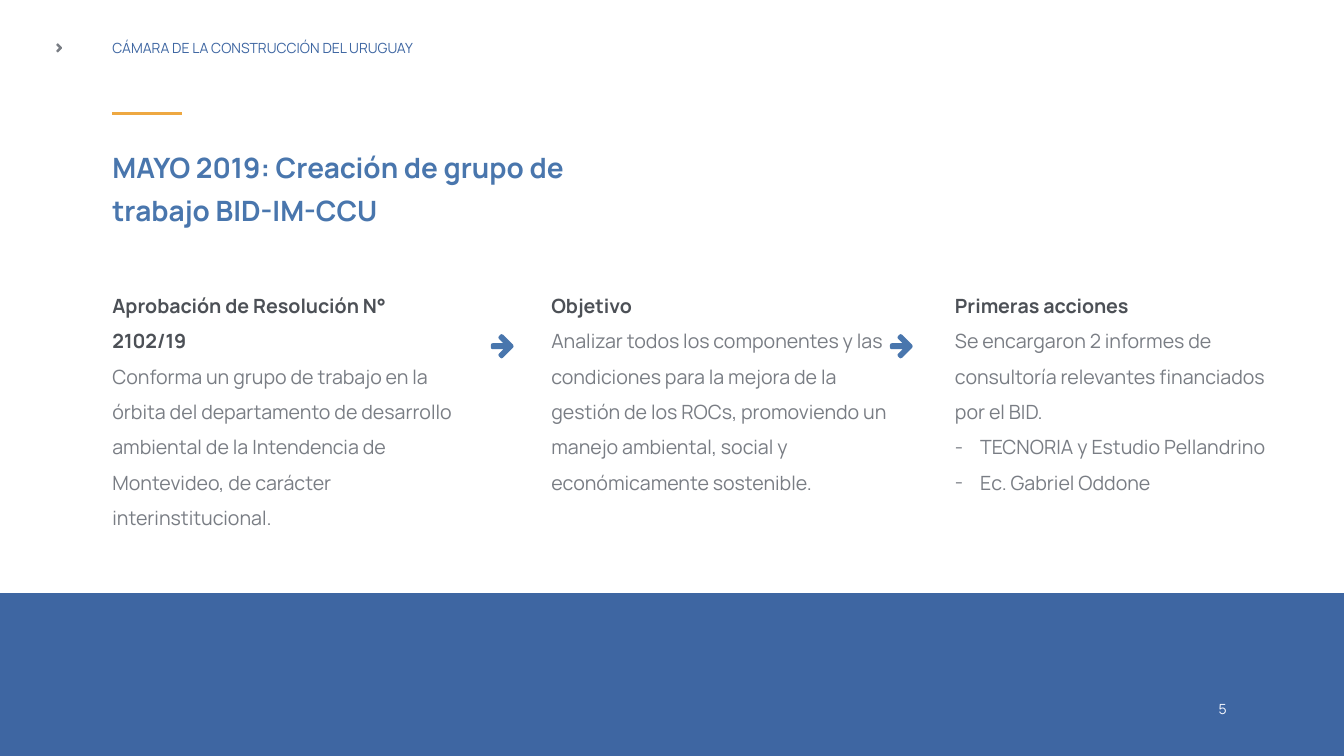
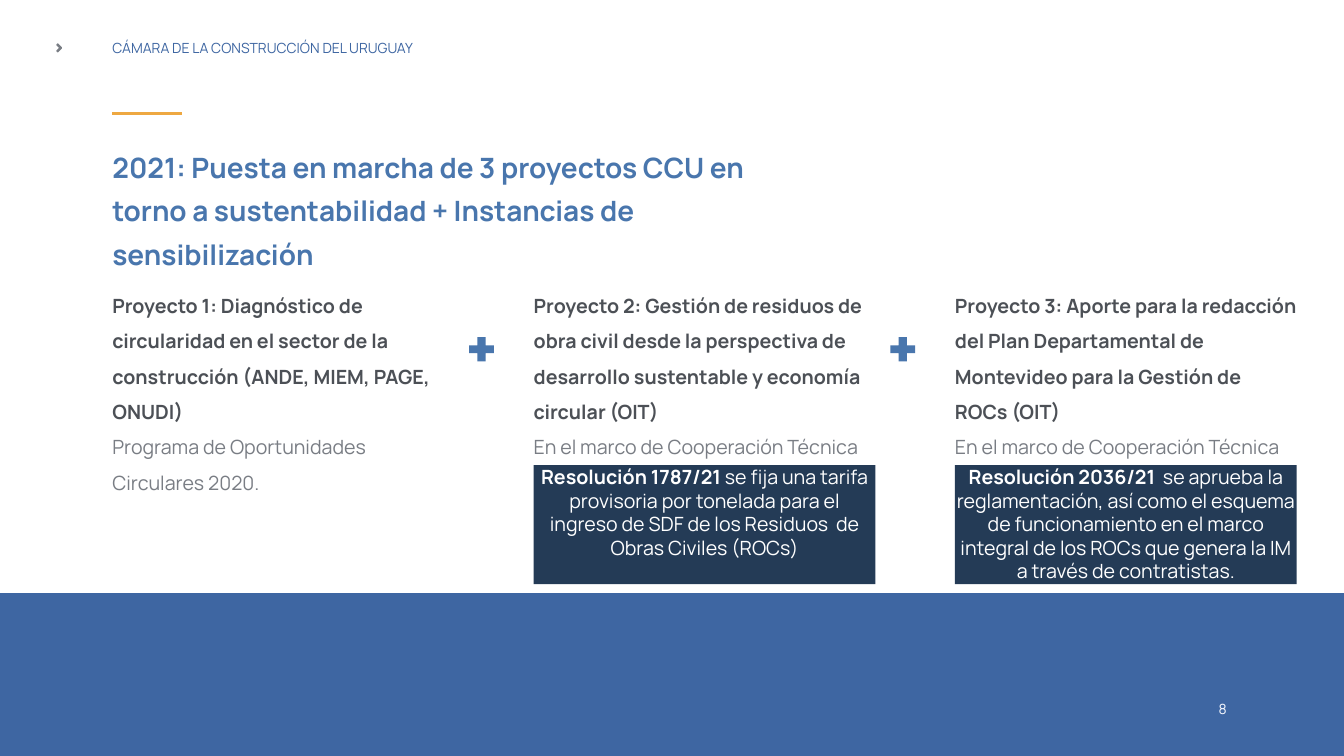
from pptx import Presentation
from pptx.dml.color import RGBColor
from pptx.enum.shapes import MSO_CONNECTOR, MSO_SHAPE
from pptx.enum.text import MSO_ANCHOR, PP_ALIGN
from pptx.oxml.ns import qn
from pptx.util import Inches, Pt
from lxml.etree import SubElement

COLORS = {
    "blue": "3E66A2",
    "title": "4976AD",
    "navy": "243B56",
    "accent": "EEA841",
    "heading": "4C5056",
    "body": "797D84",
    "number": "F7F9FF",
    "white": "FFFFFF",
}
FONT = "Manrope"
LEFT = 2.23
COLUMN_TOP = 5.6
COLUMN_WIDTH = 6.78
COLUMN_LEFTS = (LEFT, 10.59, 18.95)
BODY_SIZE = 28

# Upper halves of outlines that are symmetric about a horizontal axis
ARROW_HALF = [(0.45, 0), (0.44, -0.03), (0.24, -0.23), (0.21, -0.24), (0.19, -0.23),
              (0.16, -0.2), (0.15, -0.17), (0.16, -0.15), (0.25, -0.06),
              (0.04, -0.06), (0.01, -0.05), (0, -0.02)]
CHEVRON_HALF = [(0.11, 0), (0.11, -0.01), (0.03, -0.09), (0.02, -0.09),
                (0, -0.07), (0, -0.05), (0.05, 0)]


def color(name):
    return RGBColor.from_string(COLORS[name])


def paint(shape, fill):
    shape.shadow.inherit = False
    shape.fill.solid()
    shape.fill.fore_color.rgb = color(fill)
    shape.line.fill.background()


def clear_margins(frame):
    frame.margin_left = frame.margin_right = 0
    frame.margin_top = frame.margin_bottom = 0


def style_span(span, size, color_name, bold=False):
    span.font.name = FONT
    span.font.size = Pt(size)
    span.font.bold = bold
    span.font.color.rgb = color(color_name)


def add_text(page, left, top, width, height, text, size, color_name,
             bold=False, spacing=None, align=None, wrap=True):
    box = page.shapes.add_textbox(Inches(left), Inches(top), Inches(width), Inches(height))
    frame = box.text_frame
    clear_margins(frame)
    frame.word_wrap = wrap
    frame.text = text
    for paragraph in frame.paragraphs:
        paragraph.line_spacing = spacing
        paragraph.alignment = align
        for span in paragraph.runs:
            style_span(span, size, color_name, bold)
    return box


def add_rectangle(page, left, top, width, height, fill):
    box = page.shapes.add_shape(MSO_SHAPE.RECTANGLE, Inches(left), Inches(top),
                                Inches(width), Inches(height))
    paint(box, fill)
    return box


def add_mirrored_shape(page, left, middle, half, fill):
    lower = [(x, -y) for x, y in reversed(half) if y]
    points = [(Inches(left + x), Inches(middle + y)) for x, y in half + lower]
    builder = page.shapes.build_freeform(*points[0], scale=1.0)
    builder.add_line_segments(points[1:], close=True)
    paint(builder.convert_to_shape(), fill)


def add_plus(page, left):
    plus = page.shapes.add_shape(MSO_SHAPE.CROSS, Inches(left), Inches(6.69),
                                 Inches(0.49), Inches(0.48))
    plus.adjustments[0] = 0.34
    paint(plus, "title")


def add_accent_line(page):
    line = page.shapes.add_connector(MSO_CONNECTOR.STRAIGHT, Inches(LEFT), Inches(2.25),
                                     Inches(3.61), Inches(2.25))
    line.line.color.rgb = color("accent")
    line.line.width = Pt(5)
    SubElement(line._element.spPr, qn("a:effectLst"))


def add_dash(paragraph):
    properties = paragraph._p.get_or_add_pPr()
    properties.set("marL", str(Inches(0.5)))
    properties.set("indent", str(-Inches(0.5)))
    SubElement(properties, qn("a:buFont"), typeface=FONT)
    SubElement(properties, qn("a:buChar"), char="-")


def add_column(page, left, heading, body, items=()):
    box = add_text(page, left, COLUMN_TOP, COLUMN_WIDTH, 3.46,
                   "\n".join([heading, body, *items]), BODY_SIZE, "body", spacing=1.5)
    paragraphs = box.text_frame.paragraphs
    style_span(paragraphs[0].runs[0], BODY_SIZE, "heading", bold=True)
    for paragraph in paragraphs[2:]:
        add_dash(paragraph)


def add_resolution(page, left, name, detail):
    box = add_rectangle(page, left, 9.23, COLUMN_WIDTH, 2.36, "navy")
    frame = box.text_frame
    clear_margins(frame)
    frame.word_wrap = True
    frame.vertical_anchor = MSO_ANCHOR.TOP
    paragraph = frame.paragraphs[0]
    paragraph.alignment = PP_ALIGN.CENTER
    for text, bold in ((name, True), (detail, False)):
        span = paragraph.add_run()
        span.text = text
        style_span(span, BODY_SIZE, "white", bold)


def add_page(deck, number, title, title_width):
    page = deck.slides.add_slide(deck.slide_layouts[6])
    # Header
    add_text(page, LEFT, 0.78, 7.62, 0.34, "CÁMARA DE LA CONSTRUCCIÓN DEL URUGUAY",
             20, "blue")
    add_mirrored_shape(page, 1.12, 0.95, CHEVRON_HALF, "body")
    # Footer band and page number
    add_rectangle(page, 0, 11.77, 26.67, 3.23, "blue")
    add_text(page, 24.18, 13.89, 0.17, 0.33, number, 20, "number",
             align=PP_ALIGN.CENTER, wrap=False)
    # Title
    add_accent_line(page)
    add_text(page, LEFT, 2.78, title_width, 1.68, title, 40, "title", bold=True, spacing=1.3)
    return page


def add_working_group_page(deck):
    page = add_page(deck, "5", "MAYO 2019: Creación de grupo de trabajo BID-IM-CCU", 9.62)
    add_column(page, LEFT, "Aprobación de Resolución N° 2102/19",
               "Conforma un grupo de trabajo en la órbita del departamento de desarrollo "
               "ambiental de la Intendencia de Montevideo, de carácter interinstitucional.")
    add_column(page, 10.94, "Objetivo",
               "Analizar todos los componentes y las condiciones para la mejora de la gestión "
               "de los ROCs, promoviendo un manejo ambiental, social y económicamente "
               "sostenible.")
    add_column(page, COLUMN_LEFTS[2], "Primeras acciones",
               "Se encargaron 2 informes de consultoría relevantes financiados por el BID.",
               ["TECNORIA y Estudio Pellandrino", "Ec. Gabriel Oddone"])
    for left in (9.74, 17.66):
        add_mirrored_shape(page, left, 6.87, ARROW_HALF, "title")


def add_projects_page(deck):
    page = add_page(deck, "8", "2021: Puesta en marcha de 3 proyectos CCU en torno a "
                    "sustentabilidad + Instancias de sensibilización", 13.57)
    cooperation = "En el marco de Cooperación Técnica"
    projects = [
        ("Proyecto 1: Diagnóstico de circularidad en el sector de la construcción "
         "(ANDE, MIEM, PAGE, ONUDI)", "Programa de Oportunidades Circulares 2020."),
        ("Proyecto 2: Gestión de residuos de obra civil desde la perspectiva de "
         "desarrollo sustentable y economía circular (OIT)", cooperation),
        ("Proyecto 3: Aporte para la redacción del Plan Departamental de Montevideo "
         "para la Gestión de ROCs (OIT)", cooperation),
    ]
    for left, (heading, body) in zip(COLUMN_LEFTS, projects):
        add_column(page, left, heading, body)
    for left in COLUMN_LEFTS[1:]:
        add_plus(page, left - 1.28)
    # Resolutions that follow from projects 2 and 3
    add_resolution(page, COLUMN_LEFTS[1], "Resolución 1787/21 ",
                   "se fija una tarifa provisoria por tonelada para el ingreso de SDF "
                   "de los Residuos  de Obras Civiles (ROCs)")
    add_resolution(page, COLUMN_LEFTS[2], "Resolución 2036/21 ",
                   " se aprueba la reglamentación, así como el esquema de funcionamiento en "
                   "el marco integral de los ROCs que genera la IM a través de contratistas.")


def main():
    deck = Presentation()
    deck.slide_width = Inches(26.67)
    deck.slide_height = Inches(15)
    add_working_group_page(deck)
    add_projects_page(deck)
    deck.save("out.pptx")


if __name__ == "__main__":
    main()
